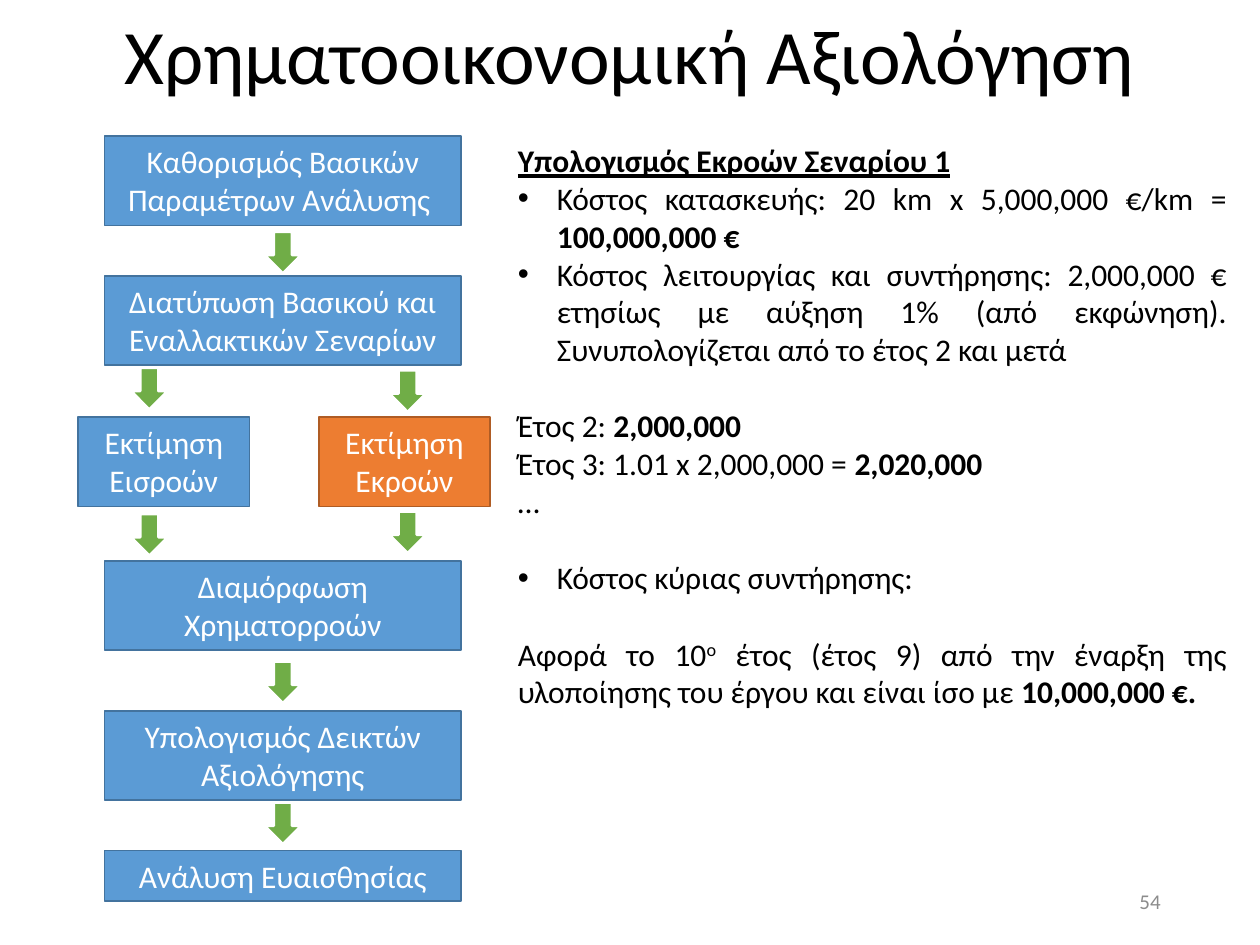
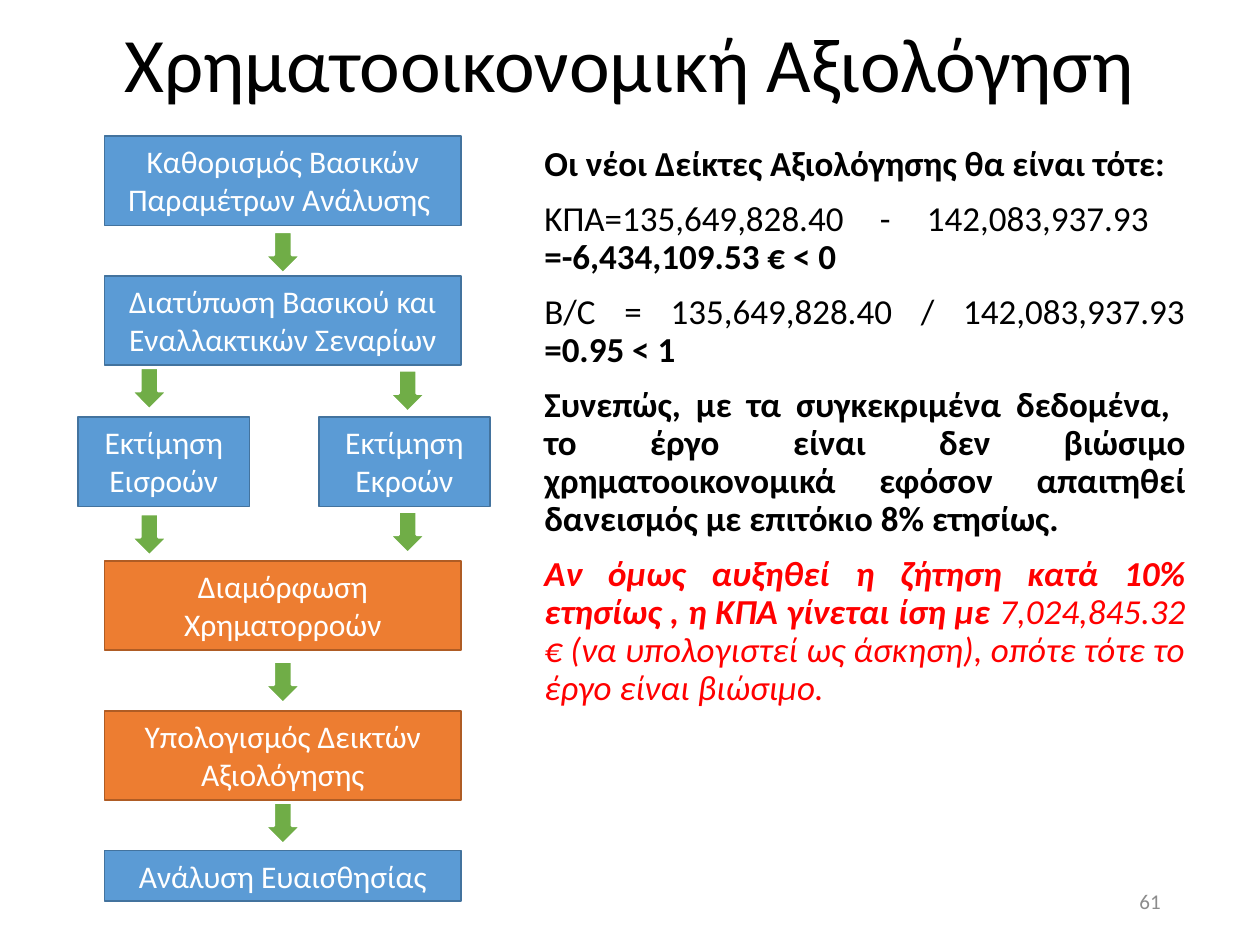
from dataclasses import dataclass

from lxml import etree
from pptx import Presentation
from pptx.dml.color import RGBColor
from pptx.enum import shapes, text
from pptx.oxml import ns
from pptx.util import Inches, Pt


@dataclass(frozen=True)
class Theme:
    font: str = "Calibri"
    title_size: int = 44
    box_size: int = 18
    number_size: int = 12
    black: str = "000000"
    white: str = "FFFFFF"
    gray: str = "8C8C8C"
    red: str = "FF0000"
    arrow: str = "70AD47"
    step: tuple = ("5B9BD5", "43739E")
    active: tuple = ("ED7D31", "AF5C24")


THEME = Theme()

# Content: the flow chart shared by both slides
TITLE = "Χρηματοοικονομική Αξιολόγηση"
WIDE, NARROW = 2.83, 1.36
TALL, SHORT = 0.71, 0.4
STEPS = {  # key: (text, left, top, width, height)
    "parameters": ("Καθορισμός Βασικών Παραμέτρων Ανάλυσης ", 0.83, 1.08, WIDE, TALL),
    "scenarios": ("Διατύπωση Βασικού και Εναλλακτικών Σεναρίων", 0.83, 2.19, WIDE, TALL),
    "inflows": ("Εκτίμηση Εισροών", 0.62, 3.31, NARROW, TALL),
    "outflows": ("Εκτίμηση Εκροών", 2.53, 3.31, NARROW, TALL),
    "cash_flows": ("Διαμόρφωση Χρηματορροών", 0.83, 4.45, WIDE, TALL),
    "indices": ("Υπολογισμός Δεικτών Αξιολόγησης", 0.83, 5.64, WIDE, TALL),
    "sensitivity": ("Ανάλυση Ευαισθησίας", 0.83, 6.75, WIDE, SHORT),
}
ARROW_SIZE = (0.29, 0.33)
ARROW_COLUMNS = {  # left: tops
    1.04: (2.92, 4.08),
    2.1: (1.84, 5.25, 6.37),
    3.09: (2.94, 4.06),
}

# Content: body paragraphs are (kind, runs); a run is (text, styles)
# Styles: b bold, i italic, u underline, r red, s superscript
# Kinds: bullet and plain, "gap" adds one line of space above
OUTFLOWS = [
    ("plain", [("Υπολογισμός Εκροών Σεναρίου 1", "bu")]),
    ("bullet", [("Κόστος κατασκευής: 20 km x 5,000,000 €/km = ", ""),
                ("100,000,000 €", "b")]),
    ("bullet", [("Κόστος λειτουργίας και συντήρησης: 2,000,000 € ετησίως με αύξηση 1% "
                 "(από εκφώνηση). Συνυπολογίζεται από το έτος 2 και μετά", "")]),
    ("plain gap", [("Έτος 2: ", ""), ("2,000,000", "b")]),
    ("plain", [("Έτος 3: 1.01 x 2,000,000 = ", ""), ("2,020,000", "b")]),
    ("plain", [("…", "")]),
    ("bullet gap", [("Κόστος κύριας συντήρησης:", "")]),
    ("plain gap", [("Αφορά το 10", ""), ("ο", "s"),
                   (" έτος (έτος 9) από την έναρξη της υλοποίησης του έργου "
                    "και είναι ίσο με ", ""), ("10,000,000 €.", "b")]),
]
INDICES = [
    ("plain", [("Οι νέοι Δείκτες Αξιολόγησης θα είναι τότε:", "b")]),
    ("plain", [("ΚΠΑ=135,649,828.40 - 142,083,937.93  ", ""),
               ("=-6,434,109.53 € < 0", "b")]),
    ("plain", [("B/C = 135,649,828.40 / 142,083,937.93 ", ""), ("=0.95 < 1", "b")]),
    ("plain", [("Συνεπώς, με τα συγκεκριμένα δεδομένα,  το έργο είναι δεν βιώσιμο "
                "χρηματοοικονομικά εφόσον απαιτηθεί δανεισμός με επιτόκιο 8% ετησίως.", "b")]),
    ("plain", [("Αν όμως αυξηθεί η ζήτηση κατά 10% ετησίως , η ΚΠΑ γίνεται ίση με ", "bir"),
               ("7,024,845.32 € (να υπολογιστεί ως άσκηση), "
                "οπότε τότε το έργο είναι βιώσιμο. ", "ir")]),
]
SLIDES = [
    dict(number="54", title_height=0.94, active={"outflows"}, body=OUTFLOWS,
         place=(4.01, 1.07, 5.83, 4.64), size=18, line=1.0, before=0),
    dict(number="61", title_height=1.07, active={"cash_flows", "indices"}, body=INDICES,
         place=(4.22, 1.11, 5.29, 5.84), size=20, line=0.9, before=10),
]
LINE_GAP = 22
BULLET_INDENT = 0.31


# Helpers
def move(shape, left, top, width, height):
    shape.left, shape.top = Inches(left), Inches(top)
    shape.width, shape.height = Inches(width), Inches(height)


def style_run(run, size, color, styles=""):
    font = run.font
    font.name, font.size = THEME.font, Pt(size)
    font.color.rgb = RGBColor.from_string(THEME.red if "r" in styles else color)
    font.bold, font.italic, font.underline = ("b" in styles, "i" in styles, "u" in styles)
    if "s" in styles:
        run._r.get_or_add_rPr().set("baseline", "30000")


def write_line(shape, words, size, color, align, anchor):
    frame = shape.text_frame
    frame.text = words
    frame.word_wrap = True
    frame.vertical_anchor = anchor
    paragraph = frame.paragraphs[0]
    paragraph.alignment = align
    style_run(paragraph.runs[0], size, color)
    return paragraph


def set_bullet(paragraph, bulleted):
    properties = paragraph._p.get_or_add_pPr()
    indent = Inches(BULLET_INDENT) if bulleted else 0
    properties.set("marL", str(indent))
    properties.set("indent", str(-indent))
    if bulleted:
        etree.SubElement(properties, ns.qn("a:buFont"), typeface="Arial")
        etree.SubElement(properties, ns.qn("a:buChar"), char="•")
    else:
        etree.SubElement(properties, ns.qn("a:buNone"))


def add_preset(group, preset, place, fill, line, line_width):
    shape = group.shapes.add_shape(preset, *map(Inches, place))
    shape.shadow.inherit = False
    shape.fill.solid()
    shape.fill.fore_color.rgb = RGBColor.from_string(fill)
    shape.line.color.rgb = RGBColor.from_string(line)
    shape.line.width = Pt(line_width)
    return shape


# Slide parts
def add_title(slide, height):
    title = slide.shapes.title
    move(title, 0, 0, 10, height)
    paragraph = write_line(title, TITLE, THEME.title_size, THEME.black,
                           text.PP_ALIGN.CENTER, text.MSO_ANCHOR.MIDDLE)
    paragraph.line_spacing = 0.9
    title.text_frame.auto_size = text.MSO_AUTO_SIZE.NONE


def add_body(slide, content):
    body = slide.placeholders[1]
    move(body, *content["place"])
    frame = body.text_frame
    frame.auto_size = text.MSO_AUTO_SIZE.NONE
    for index, (kind, runs) in enumerate(content["body"]):
        paragraph = frame.add_paragraph() if index else frame.paragraphs[0]
        paragraph.alignment = text.PP_ALIGN.JUSTIFY
        paragraph.line_spacing = content["line"]
        paragraph.space_before = Pt(LINE_GAP if "gap" in kind else content["before"])
        paragraph.space_after = Pt(0)
        set_bullet(paragraph, "bullet" in kind)
        for words, styles in runs:
            run = paragraph.add_run()
            run.text = words
            style_run(run, content["size"], THEME.black, styles)


def add_number(slide, number):
    box = slide.shapes.add_textbox(*map(Inches, (7.06, 6.95, 2.25, 0.4)))
    write_line(box, number, THEME.number_size, THEME.gray,
               text.PP_ALIGN.RIGHT, text.MSO_ANCHOR.MIDDLE)


def add_flow(slide, active):
    group = slide.shapes.add_group_shape()
    for key, (words, *place) in STEPS.items():
        fill, line = THEME.active if key in active else THEME.step
        box = add_preset(group, shapes.MSO_SHAPE.RECTANGLE, place, fill, line, 1)
        write_line(box, words, THEME.box_size, THEME.white,
                   text.PP_ALIGN.CENTER, text.MSO_ANCHOR.TOP)
        box.text_frame.auto_size = text.MSO_AUTO_SIZE.SHAPE_TO_FIT_TEXT
    for left, tops in ARROW_COLUMNS.items():
        for top in tops:
            add_preset(group, shapes.MSO_SHAPE.DOWN_ARROW, (left, top, *ARROW_SIZE),
                       THEME.arrow, THEME.white, 1.5)


def main():
    presentation = Presentation()
    presentation.slide_width, presentation.slide_height = Inches(10), Inches(7.5)
    for content in SLIDES:
        slide = presentation.slides.add_slide(presentation.slide_layouts[1])
        add_title(slide, content["title_height"])
        add_body(slide, content)
        add_number(slide, content["number"])
        add_flow(slide, content["active"])
    presentation.save("out.pptx")


if __name__ == "__main__":
    main()
